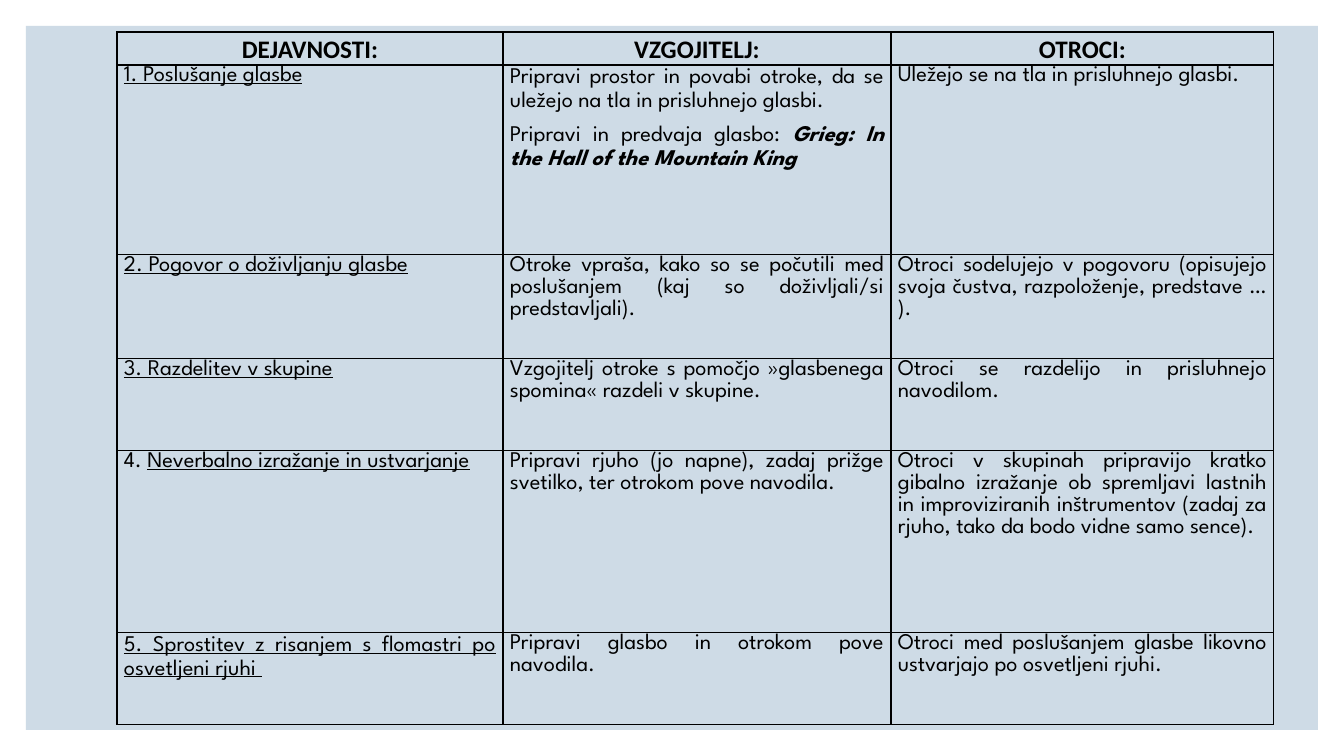
from lxml.etree import SubElement
from pptx import Presentation
from pptx.dml.color import RGBColor
from pptx.enum.shapes import MSO_SHAPE
from pptx.enum.text import PP_ALIGN
from pptx.oxml.ns import qn
from pptx.util import Emu, Pt

# Content: a cell is a list of paragraphs, a paragraph a list of (text, style) runs
# Styles: u = underlined, b = bold, i = italic
HEADERS = ["DEJAVNOSTI:", "VZGOJITELJ:", "OTROCI:"]
ACTIVITIES = [
    (
        [[("1. Poslušanje glasbe", "u")]],
        [[("Pripravi prostor in povabi otroke, da se uležejo na tla in prisluhnejo glasbi.", "")],
         [("Pripravi in predvaja glasbo: ", ""), ("Grieg: In the Hall of the Mountain King", "bi")]],
        [[("Uležejo se na tla in prisluhnejo glasbi.", "")]],
    ),
    (
        [[("2. Pogovor o doživljanju glasbe", "u")]],
        [[("Otroke vpraša, kako so se počutili med poslušanjem (kaj so doživljali/si predstavljali).", "")]],
        [[("Otroci sodelujejo v pogovoru (opisujejo svoja čustva, razpoloženje, predstave … ).", "")]],
    ),
    (
        [[("3. Razdelitev v skupine", "u")]],
        [[("Vzgojitelj otroke s pomočjo »glasbenega spomina« razdeli v skupine.", "")]],
        [[("Otroci se razdelijo in prisluhnejo navodilom.", "")]],
    ),
    (
        [[("4. ", ""), ("Neverbalno izražanje in ustvarjanje", "u")]],
        [[("Pripravi rjuho (jo napne), zadaj prižge svetilko, ter otrokom pove navodila.", "")]],
        [[("Otroci v skupinah pripravijo kratko gibalno izražanje ob spremljavi lastnih in "
           "improviziranih inštrumentov (zadaj za rjuho, tako da bodo vidne samo sence).", "")]],
    ),
    (
        [[("5. Sprostitev z risanjem s flomastri po osvetljeni rjuhi ", "u")]],
        [[("Pripravi glasbo in otrokom pove navodila.", "")]],
        [[("Otroci med poslušanjem glasbe likovno ustvarjajo po osvetljeni rjuhi.", "")]],
    ),
]
LOOSE_CELLS = {(1, 1), (5, 0)}  # wider line spacing

# Layout in px
SLIDE_SIZE = (1344, 756)
PANEL = (26, 26, 1292, 704)
TABLE_LEFT, TABLE_TOP = 117, 32
COLUMN_WIDTHS = [386, 388, 383]
ROW_HEIGHTS = [32, 190, 104, 92, 182, 92]
CELL_MARGIN = 7


def px(length):
    return Emu(round(length * 914400 / 100.8))


def color(value):
    return RGBColor.from_string(value)


def add_borders(cell):
    properties = cell._tc.get_or_add_tcPr()
    for position, side in enumerate(("lnL", "lnR", "lnT", "lnB")):
        line = properties.makeelement(qn(f"a:{side}"), {"w": str(Pt(1))})
        fill = SubElement(line, qn("a:solidFill"))
        SubElement(fill, qn("a:srgbClr"), val="000000")
        properties.insert(position, line)


def fill_cell(cell, paragraphs, font_name, size, alignment, spacing):
    cell.fill.background()
    add_borders(cell)
    cell.margin_left = cell.margin_right = px(CELL_MARGIN)
    cell.margin_top = cell.margin_bottom = 0
    frame = cell.text_frame
    for index, runs in enumerate(paragraphs):
        paragraph = frame.add_paragraph() if index else frame.paragraphs[0]
        paragraph.alignment = alignment
        paragraph.line_spacing = spacing
        paragraph.space_after = Pt(8)
        paragraph.font.name = font_name
        paragraph.font.size = Pt(size)
        paragraph.font.color.rgb = color("000000")
        for text, style in runs:
            run = paragraph.add_run()
            run.text = text
            run.font.bold = "b" in style
            run.font.italic = "i" in style
            run.font.underline = "u" in style


presentation = Presentation()
presentation.slide_width, presentation.slide_height = map(px, SLIDE_SIZE)
slide = presentation.slides.add_slide(presentation.slide_layouts[6])

# Background panel
panel = slide.shapes.add_shape(MSO_SHAPE.RECTANGLE, *map(px, PANEL))
panel.shadow.inherit = False
panel.fill.solid()
panel.fill.fore_color.rgb = color("CEDBE6")
panel.line.fill.background()

# Activity table
table = slide.shapes.add_table(
    len(ROW_HEIGHTS), len(COLUMN_WIDTHS), px(TABLE_LEFT), px(TABLE_TOP),
    px(sum(COLUMN_WIDTHS)), px(sum(ROW_HEIGHTS))).table
table.first_row = table.horz_banding = False
for column, width in zip(table.columns, COLUMN_WIDTHS):
    column.width = px(width)
for row, height in zip(table.rows, ROW_HEIGHTS):
    row.height = px(height)

# Header row
for column_index, header in enumerate(HEADERS):
    fill_cell(table.cell(0, column_index), [[(header, "b")]], "Calibri", 18, PP_ALIGN.CENTER, 1.07)

# Activity rows
for row_index, activity in enumerate(ACTIVITIES, start=1):
    for column_index, paragraphs in enumerate(activity):
        spacing = 1.15 if (row_index, column_index) in LOOSE_CELLS else 1.07
        fill_cell(table.cell(row_index, column_index), paragraphs,
                  "League Spartan", 16, PP_ALIGN.JUSTIFY, spacing)

presentation.save("out.pptx")
